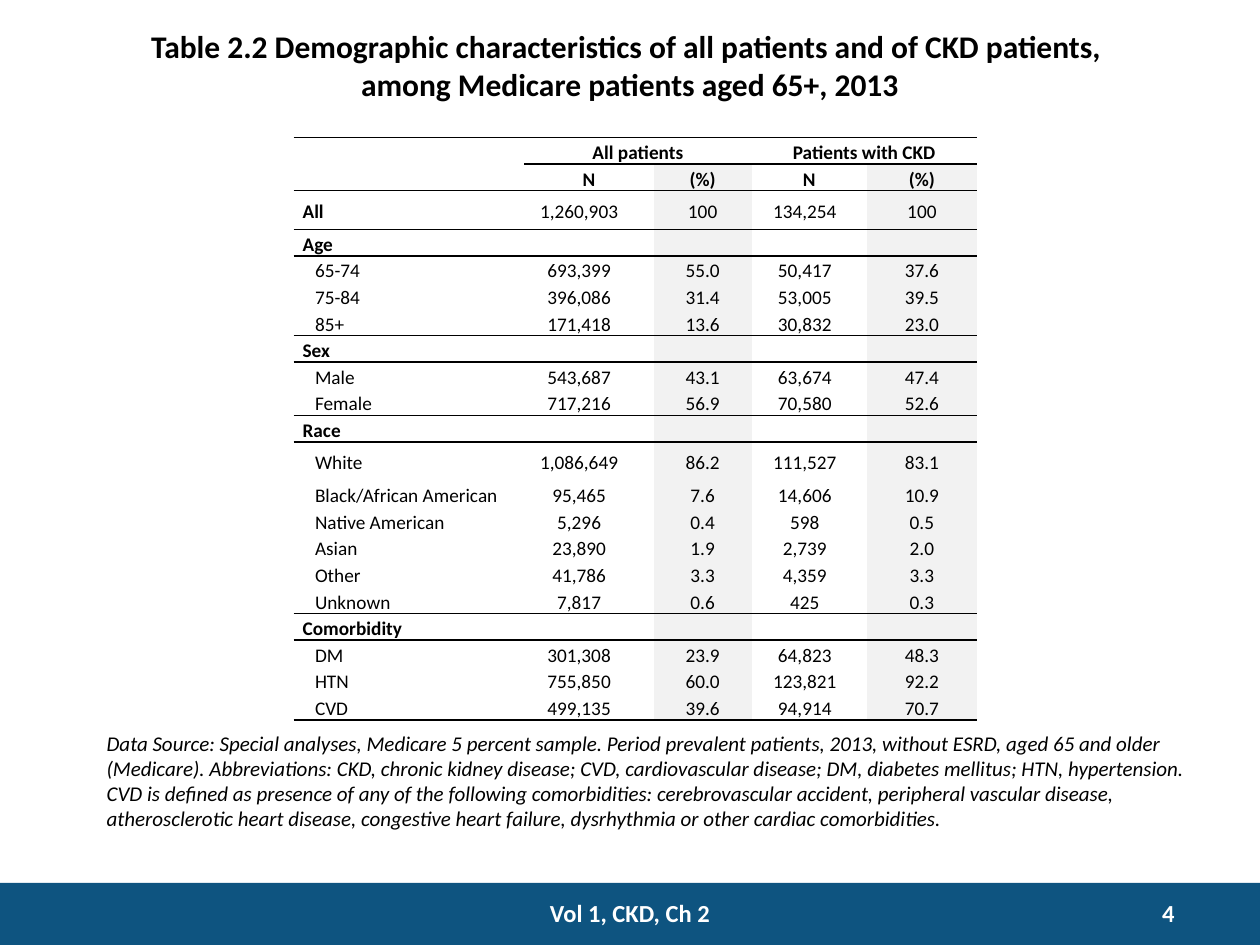
from dataclasses import dataclass

from lxml.etree import SubElement
from pptx import Presentation
from pptx.dml.color import RGBColor
from pptx.enum.shapes import MSO_SHAPE
from pptx.enum.text import MSO_ANCHOR, PP_ALIGN
from pptx.oxml.ns import qn
from pptx.util import Cm, Pt


@dataclass(frozen=True)
class Theme:
    face: str = "Calibri"
    ink: str = "000000"
    paper: str = "FFFFFF"
    band: str = "0E5480"
    shade: str = "F2F2F2"
    title: int = 18
    foot: int = 14
    note: int = 12
    body: int = 11


THEME = Theme()
PLAIN = "{2D5ABB26-0587-4C30-8999-92F81FD0307C}"  # no style, no grid
TITLE = ("Table 2.2 Demographic characteristics of all patients and of CKD patients, ",
         "among Medicare patients aged 65+, 2013")
NOTE = (
    "Data Source: Special analyses, Medicare 5 percent sample. Period prevalent patients, "
    "2013, without ESRD, aged 65 and older (Medicare). Abbreviations: CKD, chronic kidney "
    "disease; CVD, cardiovascular disease; DM, diabetes mellitus; HTN, hypertension. CVD is "
    "defined as presence of any of the following comorbidities: cerebrovascular accident, "
    "peripheral vascular disease, atherosclerotic heart disease, congestive heart failure, "
    "dysrhythmia or other cardiac comorbidities."
)
HEADS = [("", "All patients", "", "Patients with CKD", ""),
         ("", "N", "(%)", "N", "(%)")]
TOTAL = ("All", "1,260,903", "100", "134,254", "100")
GROUPS = {
    "Age": [
        ("65-74", "693,399", "55.0", "50,417", "37.6"),
        ("75-84", "396,086", "31.4", "53,005", "39.5"),
        ("85+", "171,418", "13.6", "30,832", "23.0"),
    ],
    "Sex": [
        ("Male", "543,687", "43.1", "63,674", "47.4"),
        ("Female", "717,216", "56.9", "70,580", "52.6"),
    ],
    "Race": [
        ("White", "1,086,649", "86.2", "111,527", "83.1"),
        ("Black/African American", "95,465", "7.6", "14,606", "10.9"),
        ("Native American", "5,296", "0.4", "598", "0.5"),
        ("Asian", "23,890", "1.9", "2,739", "2.0"),
        ("Other", "41,786", "3.3", "4,359", "3.3"),
        ("Unknown", "7,817", "0.6", "425", "0.3"),
    ],
    "Comorbidity": [
        ("DM", "301,308", "23.9", "64,823", "48.3"),
        ("HTN", "755,850", "60.0", "123,821", "92.2"),
        ("CVD", "499,135", "39.6", "94,914", "70.7"),
    ],
}
WIDTHS = (4.65, 2.61, 1.97, 2.33, 2.21)
PAD = 0.18
EXTRA = {1: 0.4, 3: 0.18}  # more room right of the counts
INDENT = 0.25
ROW, TALL = 0.47, 0.78


def put(para, text, size, color=THEME.ink, bold=False, slant=False):
    run = para.add_run()
    run.text = text
    font = run.font
    font.name, font.size, font.bold, font.italic = THEME.face, Pt(size), bold, slant
    font.color.rgb = RGBColor.from_string(color)


def add_box(slide, box, align=PP_ALIGN.LEFT):
    """Add an empty wrapping text box and return its paragraph."""
    frame = slide.shapes.add_textbox(*map(Cm, box)).text_frame
    frame.word_wrap = True
    para = frame.paragraphs[0]
    para.alignment = align
    return para


def add_title(slide, box):
    para = add_box(slide, box, PP_ALIGN.CENTER)
    first, last = TITLE
    put(para, first, THEME.title, bold=True)
    para.add_line_break()
    put(para, last, THEME.title, bold=True)


def add_note(slide, box):
    put(add_box(slide, box), NOTE, THEME.note, slant=True)


def add_foot(slide, box):
    left, top, width, height = box
    bar = slide.shapes.add_shape(MSO_SHAPE.RECTANGLE, *map(Cm, box))
    bar.shadow.inherit = False
    bar.fill.solid()
    bar.fill.fore_color.rgb = RGBColor.from_string(THEME.band)
    bar.line.fill.background()
    wide = 5.5
    parts = [
        ("Vol 1, CKD, Ch 2", left + (width - wide) / 2, wide, PP_ALIGN.CENTER),
        ("4", left + width - 4.01, 2.54, PP_ALIGN.RIGHT),
    ]
    for text, x, span, align in parts:
        para = add_box(slide, (x, top + 0.18, span, height - 0.4), align)
        put(para, text, THEME.foot, THEME.paper, bold=True)


def rule(cell, side):
    """Draw a border on one side of a cell: T or B."""
    props = cell._tc.get_or_add_tcPr()
    line = SubElement(props, qn(f"a:ln{side}"), w=str(Pt(1)))
    fill = SubElement(line, qn("a:solidFill"))
    SubElement(fill, qn("a:srgbClr"), val=THEME.ink)


def set_cell(cell, text, col, bold, shift, extra, shaded):
    cell.vertical_anchor = MSO_ANCHOR.MIDDLE
    cell.margin_top = cell.margin_bottom = 0
    cell.margin_left, cell.margin_right = Cm(PAD), Cm(PAD + extra)
    para = cell.text_frame.paragraphs[0]
    para.line_spacing = 1.15
    para.alignment = PP_ALIGN.CENTER if col else PP_ALIGN.LEFT
    if shift:
        para._p.get_or_add_pPr().set("marL", str(Cm(INDENT)))
    if text:
        put(para, text, THEME.body, bold=bold)
    else:
        SubElement(para._p, qn("a:endParaRPr"), sz=str(THEME.body * 100))
    if shaded:
        cell.fill.solid()
        cell.fill.fore_color.rgb = RGBColor.from_string(THEME.shade)
    else:
        cell.fill.background()


def add_grid(slide, box):
    rows = HEADS + [TOTAL]
    ends = {1, 2}  # rows closed by a full-width rule
    for name, items in GROUPS.items():
        rows += [(name, "", "", "", "")] + items
        ends.add(len(rows) - 1)

    shape = slide.shapes.add_table(len(rows), len(WIDTHS), *map(Cm, box))
    next(shape._element.iter(qn("a:tableStyleId"))).text = PLAIN
    grid = shape.table
    grid.first_row = grid.horz_banding = False
    for col, width in zip(grid.columns, WIDTHS):
        col.width = Cm(width)

    for i, row in enumerate(rows):
        grid.rows[i].height = Cm(TALL if row[0] in ("All", "White") else ROW)
        head = i < len(HEADS)
        strong = row[0] in GROUPS or row is TOTAL
        for j, text in enumerate(row):
            cell = grid.cell(i, j)
            if i == 0 or i - 1 in ends or (i == 1 and j):
                rule(cell, "T")
            if i in ends or (i == 0 and j):
                rule(cell, "B")
            set_cell(cell, text, j,
                     bold=head or (strong and j == 0),
                     shift=not (head or strong or j),
                     extra=0 if head else EXTRA.get(j, 0),
                     shaded=i > 0 and j in (2, 4))
    for j in (1, 3):
        grid.cell(0, j).merge(grid.cell(0, j + 1))


def main():
    deck = Presentation()
    deck.slide_width, deck.slide_height = Cm(25.4), Cm(19.05)
    slide = deck.slides.add_slide(deck.slide_layouts[6])
    add_foot(slide, (0, 17.8, 25.4, 1.25))
    add_title(slide, (0, 0.43, 25.4, 2.1))
    add_note(slide, (1.9, 14.6, 22.86, 2.3))
    add_grid(slide, (5.92, 2.77, sum(WIDTHS), 11.73))
    deck.save("out.pptx")


if __name__ == "__main__":
    main()
